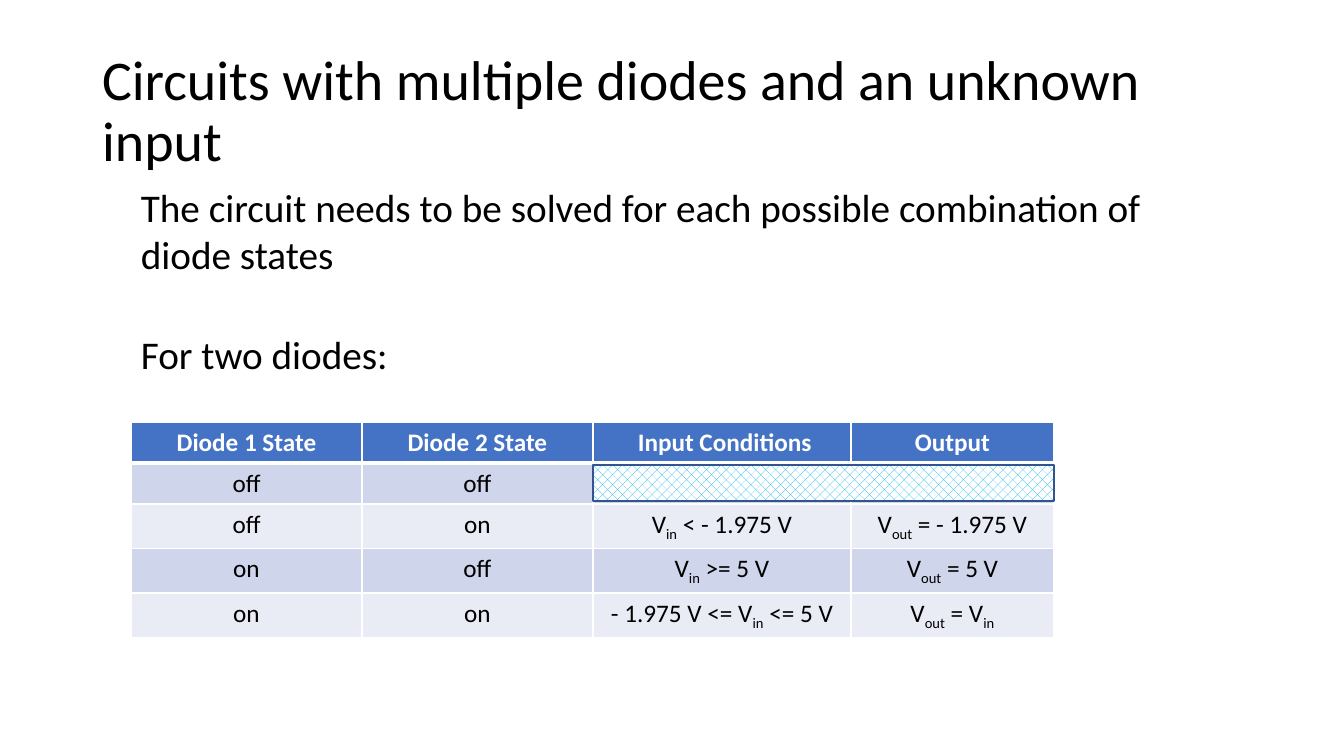
import pptx
import pptx.dml.color
import pptx.enum.dml
import pptx.enum.shapes
import pptx.enum.text
import pptx.oxml
import pptx.oxml.ns
import pptx.util

EMU_PER_PX = 914400 / 100.8
ALIGN = pptx.enum.text.PP_ALIGN
ANCHOR = pptx.enum.text.MSO_ANCHOR
AUTO_SIZE = pptx.enum.text.MSO_AUTO_SIZE


def px(*lengths):
    """Convert pixel lengths to a list of EMU lengths."""
    return [pptx.util.Emu(round(length * EMU_PER_PX)) for length in lengths]


def color(hex_string):
    return pptx.dml.color.RGBColor.from_string(hex_string)


presentation = pptx.Presentation()
presentation.slide_width, presentation.slide_height = px(1344, 756)
slide = presentation.slides.add_slide(presentation.slide_layouts[5])

# Title
title = slide.shapes.title
title.left, title.top, title.width, title.height = px(92, 40, 1188, 146)
title.text_frame.text = "Circuits with multiple diodes and an unknown input"
title.text_frame.vertical_anchor = ANCHOR.MIDDLE
title.text_frame.auto_size = AUTO_SIZE.NONE
title_paragraph = title.text_frame.paragraphs[0]
title_paragraph.alignment = ALIGN.LEFT
title_paragraph.line_spacing = 0.9
title_paragraph.font.size = pptx.util.Pt(40)
title_paragraph.font.name = "Calibri"
title_paragraph.font.color.rgb = color("000000")

# Statements
statements = [
    ("The circuit needs to be solved for each possible combination of diode states",
     (131, 178, 1060, 105)),
    ("For two diodes:", (131, 325, 394, 57)),
]
for text, box in statements:
    text_frame = slide.shapes.add_textbox(*px(*box)).text_frame
    text_frame.word_wrap = True
    text_frame.auto_size = AUTO_SIZE.SHAPE_TO_FIT_TEXT
    text_frame.text = text
    paragraph = text_frame.paragraphs[0]
    paragraph.font.size = pptx.util.Pt(28)
    paragraph.font.name = "Calibri"
    paragraph.font.color.rgb = color("000000")

# State table; text between bars is subscript
rows = [
    ["Diode 1 State", "Diode 2 State", " Input Conditions", "Output"],
    ["off", "off", "", ""],
    ["off", "on", "V|in| < - 1.975 V", "V|out| = - 1.975 V"],
    ["on", "off", "V|in| >= 5 V", "V|out| = 5 V"],
    ["on", "on", "- 1.975 V <= V|in| <= 5 V", "V|out| = V|in|"],
]
column_widths = [231, 231, 258, 203]
row_height = 41
table = slide.shapes.add_table(
    len(rows), len(column_widths),
    *px(131, 422, sum(column_widths), row_height * len(rows))).table
for column, width in zip(table.columns, px(*column_widths)):
    column.width = width

for row_index, row in enumerate(rows):
    table.rows[row_index].height = px(row_height)[0]
    is_header = row_index == 0
    fill_color = "4472C4" if is_header else ("E9EBF5", "CFD5EA")[row_index % 2]
    border_widths = {
        "lnL": 1,
        "lnR": 1,
        "lnT": 3 if row_index == 1 else 1,
        "lnB": 3 if is_header else 1,
    }
    for column_index, text in enumerate(row):
        cell = table.cell(row_index, column_index)
        paragraph = cell.text_frame.paragraphs[0]
        paragraph.alignment = ALIGN.CENTER
        paragraph.font.size = pptx.util.Pt(18)
        paragraph.font.name = "Calibri"
        paragraph.font.bold = is_header
        paragraph.font.color.rgb = color("FFFFFF" if is_header else "000000")
        for part_index, part in enumerate(text.split("|")):
            if part:
                run = paragraph.add_run()
                run.text = part
                if part_index % 2:
                    run._r.get_or_add_rPr().set("baseline", "-25000")
        cell_properties = cell._tc.get_or_add_tcPr()
        for tag, width in border_widths.items():
            cell_properties.append(pptx.oxml.parse_xml(
                f'<a:{tag} {pptx.oxml.ns.nsdecls("a")} w="{pptx.util.Pt(width)}">'
                '<a:solidFill><a:srgbClr val="FFFFFF"/></a:solidFill>'
                f'</a:{tag}>'))
        cell.fill.solid()
        cell.fill.fore_color.rgb = color(fill_color)

# Hatched block over the impossible state
hatched_block = slide.shapes.add_shape(
    pptx.enum.shapes.MSO_SHAPE.RECTANGLE, *px(593, 465, 461, 36))
hatched_block.shadow.inherit = False
hatched_block.fill.patterned()
hatched_block.fill.pattern = pptx.enum.dml.MSO_PATTERN.PERCENT_30
hatched_block.fill.fore_color.rgb = color("00B0F0")
hatched_block.fill.back_color.rgb = color("FFFFFF")
hatched_block.line.color.rgb = color("325491")
hatched_block.line.width = pptx.util.Pt(1)

presentation.save("out.pptx")
